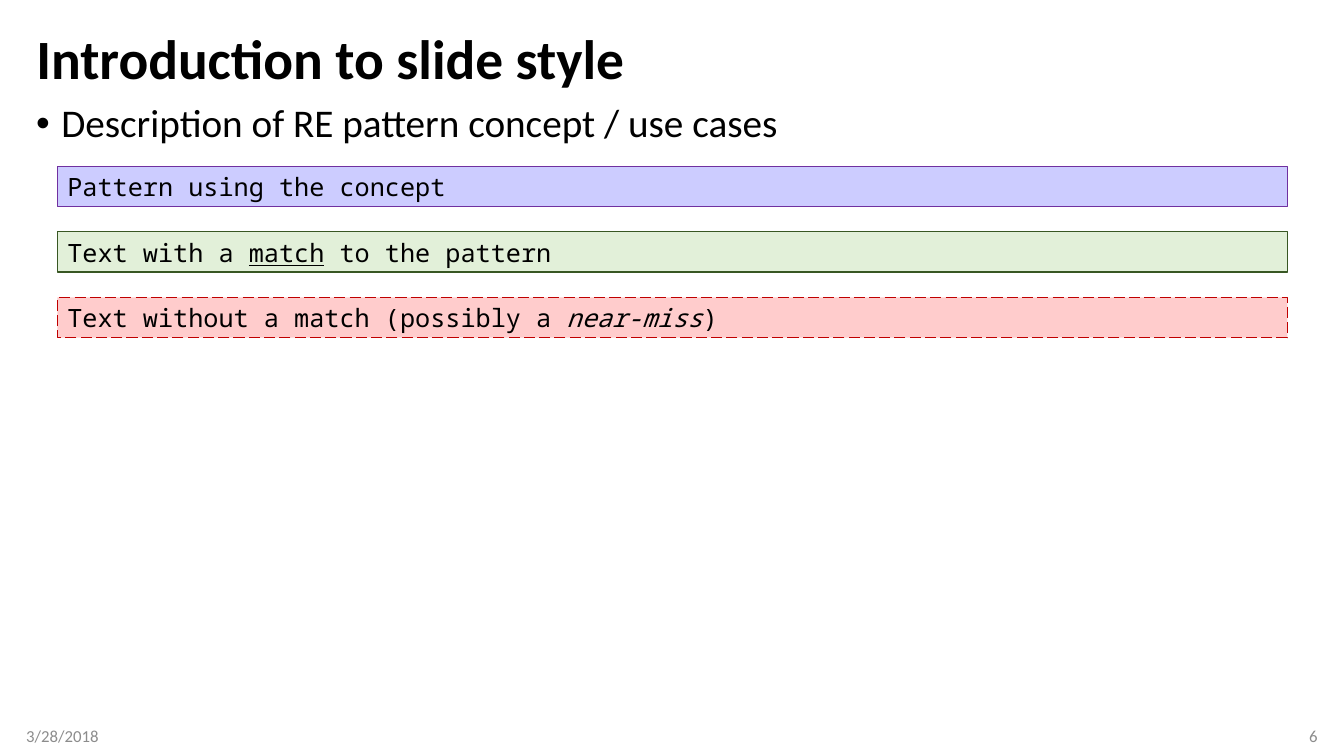
from pptx import Presentation
from pptx.dml.color import RGBColor
from pptx.enum.dml import MSO_LINE_DASH_STYLE as Dash
from pptx.enum.shapes import MSO_SHAPE as Shape
from pptx.enum.text import MSO_ANCHOR as Anchor, MSO_AUTO_SIZE as AutoSize, PP_ALIGN as Align
from pptx.oxml.ns import qn
from pptx.util import Inches, Pt
from lxml.etree import SubElement

WIDTH, HEIGHT = 13.33, 7.5
MARGIN = 0.26
CONTENT_WIDTH = WIDTH - 2 * MARGIN
COLORS = {
    "text": "000000", "footer": "8C8C8C",
    "pattern_fill": "CCCCFF", "pattern_line": "7030A0",
    "match_fill": "E2F0D9", "match_line": "385723",
    "miss_fill": "FFCCCC", "miss_line": "C00000",
}
EXAMPLES = [
    ("pattern", [("Pattern using the concept", {})], None),
    ("match", [("Text with a ", {}), ("match", {"underline": True}),
               (" to the pattern", {})], None),
    ("miss", [("Text without a match (possibly a ", {}),
              ("near-miss", {"italic": True}), (")", {})], Dash.LONG_DASH),
]


def color(name):
    return RGBColor.from_string(COLORS[name])


def write(shape, spans, size, font="Calibri", ink="text", align=Align.LEFT,
          anchor=Anchor.MIDDLE, insets=(0.1, 0.1), spacing=None, bold=False):
    frame = shape.text_frame
    frame.word_wrap = True
    frame.auto_size = AutoSize.NONE
    frame.vertical_anchor = anchor
    frame.margin_left, frame.margin_right = map(Inches, insets)
    frame.margin_top = frame.margin_bottom = Inches(0.05)
    para = frame.paragraphs[0]
    para.alignment = align
    if spacing:
        para.line_spacing = spacing
    for text, emphasis in spans:
        span = para.add_run()
        span.text = text
        span.font.name = font
        span.font.size = Pt(size)
        span.font.bold = bold
        span.font.color.rgb = color(ink)
        for style, value in emphasis.items():
            setattr(span.font, style, value)
    return para


def add_title(page, left, top, width, height):
    title = page.shapes.title
    title.left, title.top, title.width, title.height = map(Inches, (left, top, width, height))
    write(title, [("Introduction to slide style", {})], 39.6, spacing=0.9, bold=True)


def add_description(page, left, top, width, height):
    box = page.shapes.add_textbox(*map(Inches, (left, top, width, height)))
    para = write(box, [("Description of RE pattern concept / use cases", {})], 28,
                 anchor=Anchor.TOP, spacing=0.9)
    properties = para._p.get_or_add_pPr()
    properties.set("marL", str(Inches(0.25)))
    properties.set("indent", str(-Inches(0.25)))
    SubElement(properties, qn("a:buFont"), typeface="Arial")
    SubElement(properties, qn("a:buChar"), char="•")


def add_examples(page, left, top, width, pitch, height):
    for row, (kind, spans, dash) in enumerate(EXAMPLES):
        bar = page.shapes.add_shape(
            Shape.RECTANGLE, *map(Inches, (left, top + row * pitch, width, height)))
        bar.shadow.inherit = False
        bar.fill.solid()
        bar.fill.fore_color.rgb = color(f"{kind}_fill")
        bar.line.color.rgb = color(f"{kind}_line")
        bar.line.width = Pt(1)
        if dash:
            bar.line.dash_style = dash
        write(bar, spans, 18, font="Noto Sans Mono")


def add_footer(page, left, top, width, height):
    part_width = 3
    parts = [
        ("3/28/2018", left, Align.LEFT, (0, 0.1)),
        ("6", left + width - part_width, Align.RIGHT, (0.1, 0)),
    ]
    for text, part_left, align, insets in parts:
        box = page.shapes.add_textbox(*map(Inches, (part_left, top, part_width, height)))
        write(box, [(text, {})], 12, ink="footer", align=align, insets=insets)


def main():
    deck = Presentation()
    deck.slide_width, deck.slide_height = Inches(WIDTH), Inches(HEIGHT)
    page = deck.slides.add_slide(deck.slide_layouts[5])
    add_title(page, MARGIN, 0.25, CONTENT_WIDTH, 0.72)
    add_description(page, MARGIN, 0.98, CONTENT_WIDTH, 0.37)
    add_examples(page, 0.57, 1.65, 12.2, 0.65, 0.4)
    add_footer(page, MARGIN, HEIGHT - 0.4, CONTENT_WIDTH, 0.4)
    deck.save("out.pptx")


if __name__ == "__main__":
    main()
